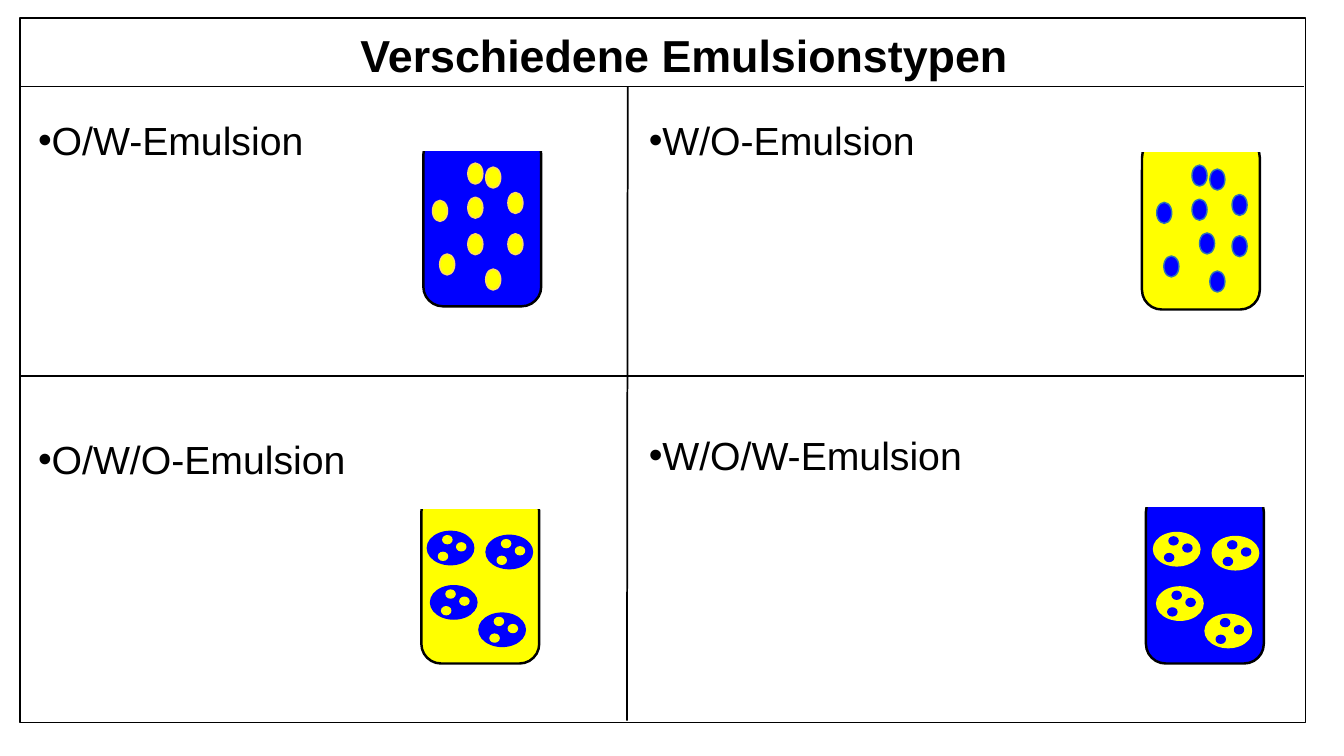
"""Build the slide on four types of emulsion."""
from pptx import Presentation
from pptx.dml.color import RGBColor
from pptx.enum.shapes import MSO_CONNECTOR, MSO_SHAPE
from pptx.enum.text import MSO_ANCHOR, MSO_AUTO_SIZE, PP_ALIGN
from pptx.oxml.ns import qn
from pptx.util import Cm, Pt
from lxml import etree

RECT, ROUND, OVAL = MSO_SHAPE.RECTANGLE, MSO_SHAPE.ROUNDED_RECTANGLE, MSO_SHAPE.OVAL
STRAIGHT = MSO_CONNECTOR.STRAIGHT
TOP, FIXED = MSO_ANCHOR.TOP, MSO_AUTO_SIZE.NONE
LEFT, CENTER = PP_ALIGN.LEFT, PP_ALIGN.CENTER

FONT = "Arial"
COLORS = {"black": "000000", "white": "FFFFFF", "oil": "FFFF00", "water": "0000FF",
          "gold": "FFD966", "steel": "2E74B5"}

TITLE = ("Verschiedene Emulsionstypen", (1.02, 0.46, 32.46, 2.39))
FRAME = (0.51, 0.46, 32.39, 17.75)
RULES = [(0.51, 9.47, 32.87, 9.47), (15.82, 2.18, 15.8, 18.16), (0.51, 2.18, 32.87, 2.18)]

GLASS, COVER = (2.97, 4.32), (6.32, 1.09)
DROP, GLOBE, CORE = (0.38, 0.53), (1.17, 0.84), (0.23, 0.2)
DROPS = [(1.57, 0.81), (2.13, 1.45), (2.13, 2.49), (1.12, 1.57), (1.12, 0.71),
         (0.23, 1.65), (1.57, 3.38), (0.41, 3.0)]
GLOBES = [(0.23, 2.36), (0.15, 0.99), (1.63, 1.09), (1.45, 3.05)]
CORES = [(0.39, 0.11), (0.28, 0.53), (0.74, 0.29)]

SINGLE = [
    {"text": "O/W-Emulsion", "box": (0.71, 2.69, 10.41, 1.45), "glass": (10.67, 3.4),
     "cover": (8.23, 2.69), "fill": "water", "drop": "oil", "edge": "gold",
     "start": (10.67, 3.4), "drops": DROPS + [(1.12, 2.49)]},
    {"text": "W/O-Emulsion", "box": (16.1, 2.69, 10.41, 1.45), "glass": (28.78, 3.48),
     "cover": (26.34, 2.72), "fill": "oil", "drop": "water", "edge": "steel",
     "start": (28.92, 3.45), "drops": DROPS + [(1.31, 2.42)]},
]
DOUBLE = [
    {"text": "O/W/O-Emulsion", "box": (0.71, 10.72, 10.41, 2.24), "glass": (10.62, 12.4),
     "cover": (9.25, 11.71), "fill": "oil", "drop": "water", "start": (10.62, 12.4)},
    {"text": "W/O/W-Emulsion", "box": (16.1, 10.62, 10.41, 1.45), "glass": (28.88, 12.4),
     "cover": (26.37, 11.66), "fill": "water", "drop": "oil", "start": (28.92, 12.43)},
]


def tint(name):
    return RGBColor.from_string(COLORS[name])


def add(pos, size):
    return pos[0] + size[0], pos[1] + size[1]


def write(holder, text, box, size=28, bold=False, align=LEFT, bullet=None):
    holder.left, holder.top, holder.width, holder.height = map(Cm, box)
    frame = holder.text_frame
    frame.word_wrap, frame.auto_size, frame.vertical_anchor = True, FIXED, TOP
    frame.margin_left = frame.margin_right = frame.margin_top = Cm(0.25)
    para = frame.paragraphs[0]
    para.alignment, para.space_before, para.line_spacing = align, Pt(0), 1.0
    props = para._p.get_or_add_pPr()
    props.set("marL", "0")
    props.set("indent", "0")
    if bullet:
        etree.SubElement(props, qn("a:buFont")).set("typeface", FONT)
        etree.SubElement(props, qn("a:buChar")).set("char", bullet)
    run = para.add_run()
    run.text = text
    run.font.name, run.font.size, run.font.bold = FONT, Pt(size), bold
    run.font.color.rgb = tint("black")


def draw(kind, pos, size, fill, line, width=1):
    shape = slide.shapes.add_shape(kind, *map(Cm, (*pos, *size)))
    shape.shadow.inherit = False
    if fill:
        shape.fill.solid()
        shape.fill.fore_color.rgb = tint(fill)
    else:
        shape.fill.background()
    shape.line.color.rgb = tint(line)
    shape.line.width = Pt(width)
    return shape


def rule(ends):
    line = slide.shapes.add_connector(STRAIGHT, *map(Cm, ends))
    line.line.color.rgb = tint("black")
    line.line.width = Pt(1.25)
    etree.SubElement(line._element.spPr, qn("a:effectLst"))


def pour(cell):
    glass = draw(ROUND, cell["glass"], GLASS, cell["fill"], "black", 1.75)
    glass.adjustments[0] = 0.167
    draw(RECT, cell["cover"], COVER, "white", "white")


deck = Presentation()
deck.slide_width, deck.slide_height = Cm(33.87), Cm(19.05)
slide = deck.slides.add_slide(deck.slide_layouts.get_by_name("Comparison"))
title, *bodies = slide.placeholders

write(title, *TITLE, size=32, bold=True, align=CENTER)
for body, cell in zip(bodies, SINGLE + DOUBLE):
    write(body, cell["text"], cell["box"], bullet="•")

draw(RECT, FRAME[:2], FRAME[2:], None, "black", 1.25)
for ends in RULES:
    rule(ends)

for cell in SINGLE:
    pour(cell)
    for spot in cell["drops"]:
        draw(OVAL, add(cell["start"], spot), DROP, cell["drop"], cell["edge"])

for cell in DOUBLE:
    pour(cell)
    for spot in GLOBES:
        pos = add(cell["start"], spot)
        draw(OVAL, pos, GLOBE, cell["drop"], cell["drop"])
        for core in CORES:
            draw(OVAL, add(pos, core), CORE, cell["fill"], cell["fill"])

deck.save("out.pptx")
